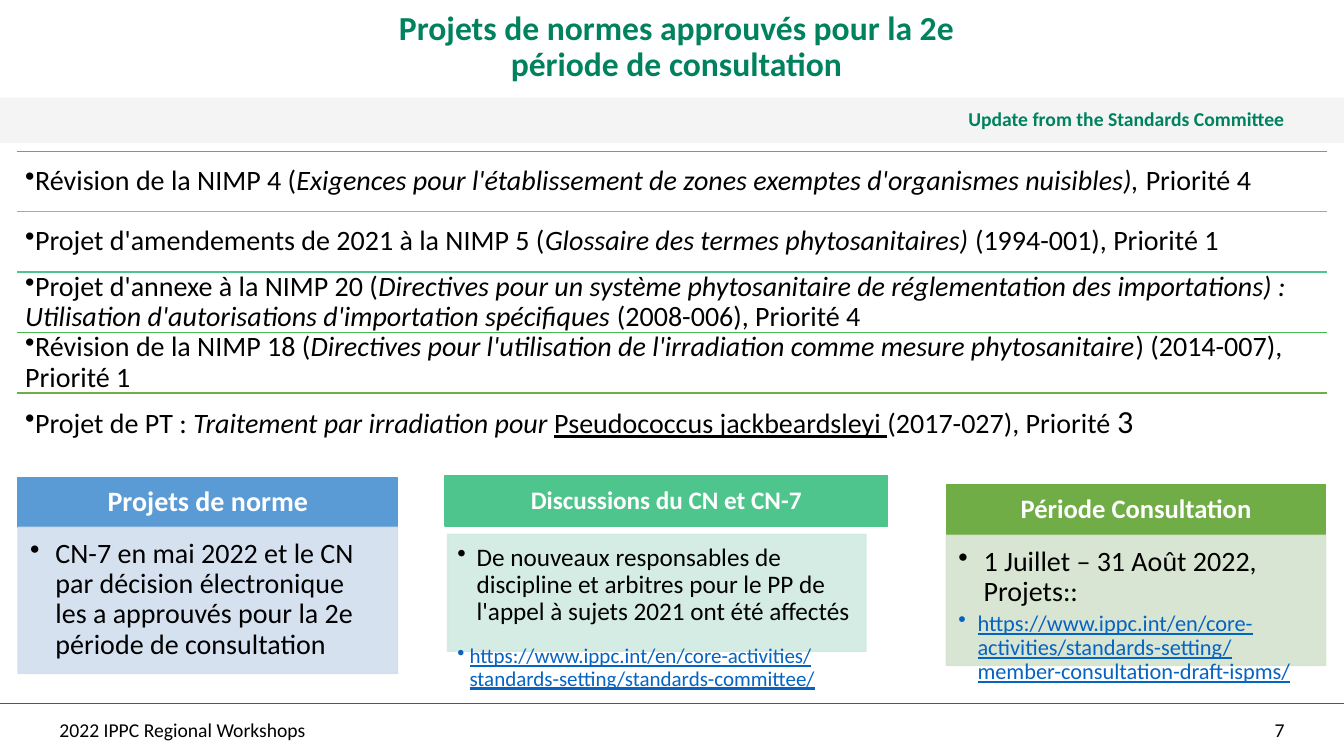
import pptx
import pptx.util
import pptx.dml.color
import pptx.enum.shapes
import pptx.enum.text
import pptx.oxml.ns
from dataclasses import dataclass
from lxml import etree

Pt = pptx.util.Pt
qn = pptx.oxml.ns.qn
ALIGN = pptx.enum.text.PP_ALIGN
ANCHOR = pptx.enum.text.MSO_ANCHOR


@dataclass(frozen=True)
class Theme:
    font: str = "Calibri"
    green: str = "00825F"
    ink: str = "000000"
    white: str = "FFFFFF"
    band: str = "E7E6E6"
    link: str = "0563C1"
    title: int = 24
    body: int = 20
    small: int = 14


THEME = Theme()
RULE_COLOURS = ["5B9BD5", "54CCCD", "4DC58D", "48BB4F", "70AD47"]
PROJECTS = [
    [("Révision de la NIMP 4 (", ""),
     ("Exigences pour l'établissement de zones exemptes d'organismes nuisibles), ", "i"),
     ("Priorité 4", "")],
    [("Projet d'amendements de 2021 à la NIMP 5 (", ""),
     ("Glossaire des termes phytosanitaires) ", "i"),
     ("(1994-001), Priorité 1", "")],
    [("Projet d'annexe à la NIMP 20 (", ""),
     ("Directives pour un système phytosanitaire de réglementation des importations) : "
      "Utilisation d'autorisations d'importation spécifiques ", "i"),
     ("(2008-006), Priorité 4", "")],
    [("Révision de la NIMP 18 (", ""),
     ("Directives pour l'utilisation de l'irradiation comme mesure phytosanitaire", "i"),
     (") (2014-007), Priorité 1", "")],
    [("Projet de PT : ", ""),
     ("Traitement par irradiation pour ", "i"),
     ("Pseudococcus jackbeardsleyi ", "u"),
     ("(2017-027), Priorité ", ""),
     ("3", "", 23)],
]


def rgb(colour):
    return pptx.dml.color.RGBColor.from_string(colour)


def set_opacity(fill_format, shape, percent):
    for colour in shape._element.spPr.iter(qn("a:srgbClr")):
        etree.SubElement(colour, qn("a:alpha"), val=str(percent * 1000))


def add_rule(page, left, top, right, colour):
    rule = page.shapes.add_connector(
        pptx.enum.shapes.MSO_CONNECTOR.STRAIGHT, Pt(left), Pt(top), Pt(right), Pt(top))
    rule.line.color.rgb = rgb(colour)
    rule.line.width = Pt(1)
    etree.SubElement(rule._element.spPr, qn("a:effectLst"))


def add_panel(page, frame, colour, opacity=100, outlined=True):
    panel = page.shapes.add_shape(
        pptx.enum.shapes.MSO_SHAPE.RECTANGLE, *map(Pt, frame))
    panel.shadow.inherit = False
    panel.fill.solid()
    panel.fill.fore_color.rgb = rgb(colour)
    if outlined:
        panel.line.color.rgb = rgb(colour)
        panel.line.width = Pt(1)
    else:
        panel.line.fill.background()
    if opacity < 100:
        set_opacity(panel.fill, panel, opacity)
    return panel


def add_label(page, frame):
    return page.shapes.add_textbox(*map(Pt, frame))


def set_up_text(box, insets, anchor=ANCHOR.MIDDLE):
    text = box.text_frame
    text.word_wrap = True
    text.vertical_anchor = anchor
    text.margin_left, text.margin_top, text.margin_right, text.margin_bottom = map(Pt, insets)
    return text


def write(para, spans, size, colour, bold=False, align=ALIGN.LEFT, bullet=False, hang=0, before=0):
    if bullet:
        properties = para._p.get_or_add_pPr()
        properties.set("marL", str(Pt(hang)))
        properties.set("indent", str(-Pt(hang)))
        etree.SubElement(properties, qn("a:buChar"), char="•")
    para.alignment = align
    para.line_spacing = 0.9
    if before:
        para.space_before = Pt(before)
    for words, style, *own_size in spans:
        span = para.add_run()
        span.text = words
        font = span.font
        font.name = THEME.font
        font.size = Pt(own_size[0] if own_size else size)
        font.color.rgb = rgb(colour)
        font.bold = bold
        font.italic = style == "i"
        font.underline = style == "u"


def add_line(box, words, size, colour, insets, bold=False, align=ALIGN.LEFT):
    text = set_up_text(box, insets)
    write(text.paragraphs[0], [(words, "")], size, colour, bold, align)


def add_project_list(page):
    left, top, width, height = 12, 108, 936, 43.2
    for row, (colour, spans) in enumerate(zip(RULE_COLOURS, PROJECTS)):
        y = top + row * height
        add_rule(page, left, y, left + width, colour)
        text = set_up_text(add_label(page, (left, y, width, height)), (6, 6, 6, 6))
        write(text.paragraphs[0], spans, THEME.body, THEME.ink, bullet=True)


def add_card(page, heading, heading_size, heading_frame, colour, body_frame, tint, insets, items):
    header = add_panel(page, heading_frame, colour)
    add_line(header, heading, heading_size, THEME.white, (11, 6, 11, 6), True, ALIGN.CENTER)
    panel = add_panel(page, body_frame, tint, 90)
    text = set_up_text(panel, insets, ANCHOR.TOP)
    for index, (words, style, size, ink, hang, before) in enumerate(items):
        para = text.add_paragraph() if index else text.paragraphs[0]
        write(para, [(words, style)], size, ink, bullet=True, hang=hang, before=before)


def add_cards(page):
    add_card(
        page, "Projets de norme", 20, (13, 341, 271, 36), "5B9BD5",
        (13, 376.6, 271, 104.4), "D2DEEF", (8.6, 8.6, 11.5, 12),
        [("CN-7 en mai 2022 et le CN par décision électronique les a approuvés "
          "pour la 2e période de consultation", "", 20, THEME.ink, 18, 0)])
    add_card(
        page, "Discussions du CN et CN-7", 18, (318, 339.8, 316, 36), "4DC58D",
        (319.7, 381.6, 298.8, 83.5), "D0EAE1", (7.2, 7.2, 10, 11.5),
        [("De nouveaux responsables de discipline et arbitres pour le PP de l'appel "
          "à sujets 2021 ont été affectés", "", 18, THEME.ink, 13.7, 0),
         ("https://www.ippc.int/en/core-activities/standards-setting/standards-committee/",
          "u", 15, THEME.link, 8.6, 14)])
    add_card(
        page, "Période Consultation", 19, (676, 346.3, 271, 36), "70AD47",
        (676, 382.3, 271, 93), "D5E3CF", (8.6, 8.6, 11.5, 12),
        [("1 Juillet – 31 Août 2022, Projets::", "", 20, THEME.ink, 18, 0),
         ("https://www.ippc.int/en/core-activities/standards-setting/"
          "member-consultation-draft-ispms/", "u", 16, THEME.link, 13.7, 3)])


def add_page_furniture(page):
    insets = (42.5, 3.6, 42.5, 3.6)
    add_rule(page, 0, 502.6, 960, THEME.green)
    add_line(add_label(page, (0, 508.3, 594, 27.4)), "2022 IPPC Regional Workshops",
             THEME.small, THEME.ink, insets)
    band = add_panel(page, (0, 69.8, 960, 32.4), THEME.band, 42, outlined=False)
    add_line(band, "Update from the Standards Committee",
             THEME.small, THEME.green, insets, True, ALIGN.RIGHT)
    add_line(add_label(page, (858, 508.3, 102, 27.4)), "7",
             THEME.small, THEME.ink, insets, align=ALIGN.RIGHT)
    add_line(add_label(page, (209, 0, 534, 72)),
             "Projets de normes approuvés pour la 2e période de consultation",
             THEME.title, THEME.green, (42.5, 0, 28, 3.6), True, ALIGN.CENTER)


def main():
    deck = pptx.Presentation()
    deck.slide_width, deck.slide_height = Pt(960), Pt(540)
    page = deck.slides.add_slide(deck.slide_layouts[6])
    add_page_furniture(page)
    add_project_list(page)
    add_cards(page)
    deck.save("out.pptx")


if __name__ == "__main__":
    main()
